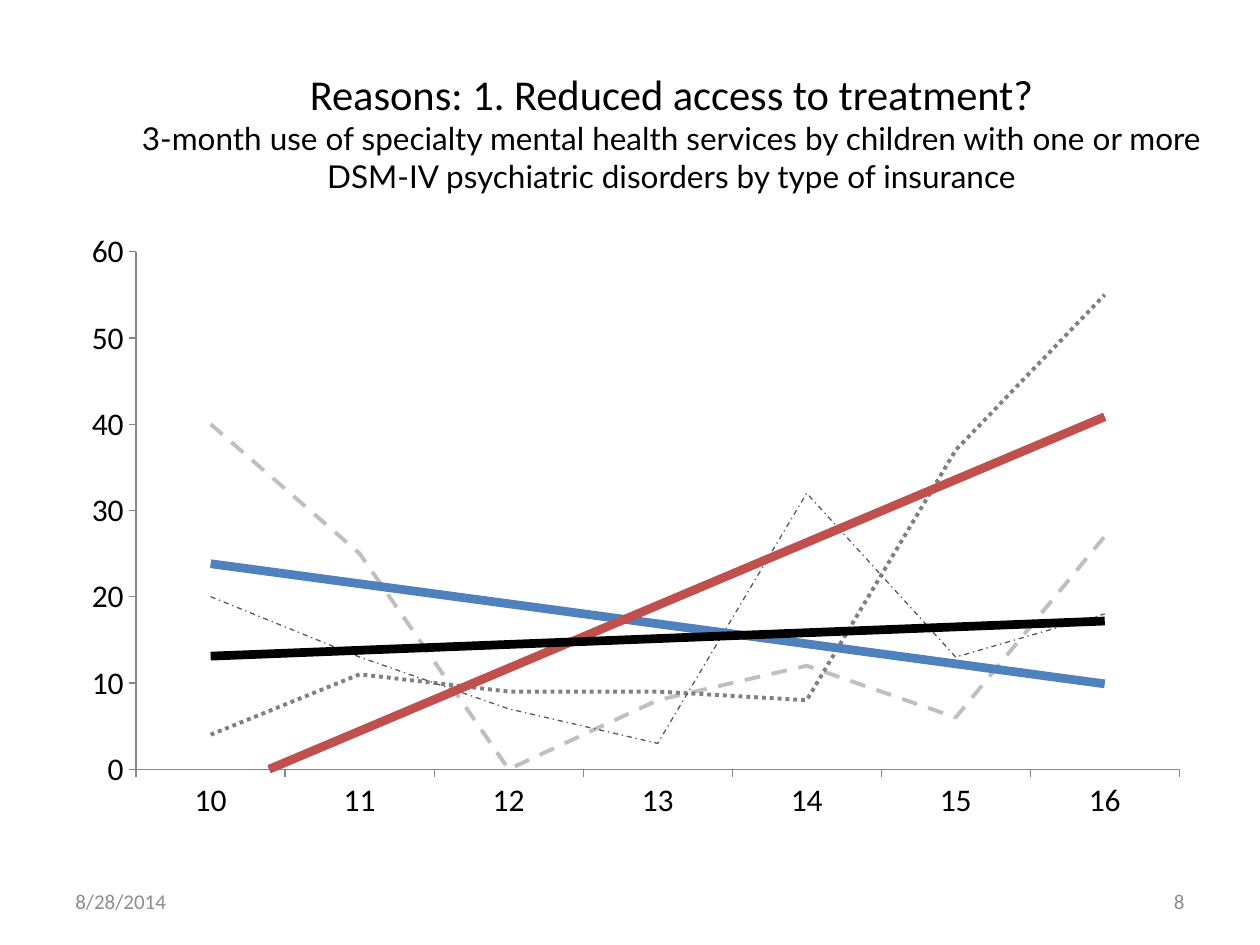
from dataclasses import dataclass

from lxml import etree
from pptx import Presentation
from pptx.chart.data import CategoryChartData
from pptx.dml.color import RGBColor
from pptx.enum.chart import XL_CHART_TYPE, XL_MARKER_STYLE, XL_TICK_MARK
from pptx.enum.dml import MSO_LINE
from pptx.enum.text import MSO_ANCHOR, MSO_AUTO_SIZE, PP_ALIGN
from pptx.oxml import parse_xml
from pptx.oxml.ns import nsdecls, qn
from pptx.util import Inches, Pt

LINE_CHART = XL_CHART_TYPE.LINE
NO_MARKER = XL_MARKER_STYLE.NONE
TICK_OUTSIDE, TICK_NONE = XL_TICK_MARK.OUTSIDE, XL_TICK_MARK.NONE
DASH, DOTS, DASH_DOT = MSO_LINE.DASH, MSO_LINE.ROUND_DOT, MSO_LINE.DASH_DOT
LEFT, CENTER, RIGHT = PP_ALIGN.LEFT, PP_ALIGN.CENTER, PP_ALIGN.RIGHT
MIDDLE = MSO_ANCHOR.MIDDLE
TITLE_ONLY = 5


@dataclass(frozen=True)
class Theme:
    font: str = "Calibri"
    subtitle_font: str = "Lato"
    text: str = "000000"
    footer: str = "8C8C8C"
    axis: str = "868686"
    title_size: float = 24.3
    body_size: float = 18
    footer_size: float = 12
    trend_width: float = 5


@dataclass(frozen=True)
class ServiceSeries:
    name: str
    values: tuple[int, ...]
    color: str
    width: float
    dash: int
    trend_color: str


THEME = Theme()
AGES = [str(age) for age in range(10, 17)]
SERIES = [
    ServiceSeries("Series 1", (40, 25, 0, 8, 12, 6, 27), "BFBFBF", 2.25, DASH, "4F81BD"),
    ServiceSeries("Series 2", (4, 11, 9, 9, 8, 37, 55), "808080", 2.25, DOTS, "C0504D"),
    ServiceSeries("Series 3", (20, 13, 7, 3, 32, 13, 18), "595959", 0.75, DASH_DOT, "000000"),
]


def write_text(paragraph, text: str, *, font: str = THEME.font,
               size: float = THEME.body_size, color: str = THEME.text,
               align=LEFT) -> None:
    paragraph.alignment = align
    run = paragraph.add_run()
    run.text = text
    run.font.name = font
    run.font.size = Pt(size)
    run.font.color.rgb = RGBColor.from_string(color)


def place(shape, left: float, top: float, width: float, height: float) -> None:
    shape.left, shape.top = Inches(left), Inches(top)
    shape.width, shape.height = Inches(width), Inches(height)


def add_title(slide) -> None:
    title = slide.shapes.title
    place(title, 0.83, 0.33, 9, 1.42)
    frame = title.text_frame
    frame.word_wrap = True
    frame.auto_size = MSO_AUTO_SIZE.NONE
    frame.vertical_anchor = MIDDLE
    write_text(frame.paragraphs[0], "Reasons: 1. Reduced access to treatment?",
               size=THEME.title_size, align=CENTER)
    subtitle = frame.add_paragraph()
    subtitle.space_before = Pt(0)
    write_text(subtitle,
               "3-month use of specialty mental health services by children with "
               "one or more DSM-IV psychiatric disorders by type of insurance",
               font=THEME.subtitle_font, align=CENTER)


def add_footer(slide, left: float, text: str, align) -> None:
    box = slide.shapes.add_textbox(Inches(left), Inches(6.95), Inches(2.33), Inches(0.4))
    box.text_frame.word_wrap = True
    box.text_frame.vertical_anchor = MIDDLE
    write_text(box.text_frame.paragraphs[0], text, size=THEME.footer_size,
               color=THEME.footer, align=align)


def add_trend(series, color: str) -> None:
    trend = parse_xml(
        f'<c:trendline {nsdecls("c", "a")}><c:spPr>'
        f'<a:ln w="{Pt(THEME.trend_width)}"><a:solidFill><a:srgbClr val="{color}"/>'
        '</a:solidFill></a:ln></c:spPr><c:trendlineType val="linear"/>'
        '<c:dispRSqr val="0"/><c:dispEq val="0"/></c:trendline>')
    series._element.find(qn("c:cat")).addprevious(trend)


def set_plot_area(chart, **fractions: float) -> None:
    """Fix the inner plot area as fractions of the chart's size."""
    plot_area = chart._chartSpace.find(".//" + qn("c:plotArea"))
    layout = plot_area.find(qn("c:layout"))
    if layout is None:
        layout = etree.Element(qn("c:layout"))
        plot_area.insert(0, layout)
    manual = etree.SubElement(layout, qn("c:manualLayout"))
    settings = {"layoutTarget": "inner", "xMode": "edge", "yMode": "edge", **fractions}
    for name, value in settings.items():
        etree.SubElement(manual, qn(f"c:{name}")).set("val", str(value))


def format_axis(axis) -> None:
    axis.has_major_gridlines = False
    axis.major_tick_mark = TICK_OUTSIDE
    axis.minor_tick_mark = TICK_NONE
    axis.format.line.color.rgb = RGBColor.from_string(THEME.axis)
    axis.format.line.width = Pt(0.75)


def add_service_chart(slide) -> None:
    data = CategoryChartData()
    data.categories = AGES
    for item in SERIES:
        data.add_series(item.name, item.values)
    chart = slide.shapes.add_chart(LINE_CHART, Inches(0.54), Inches(1.75),
                                   Inches(9), Inches(4.95), data).chart
    chart.has_legend = False
    chart.has_title = False
    chart.font.name = THEME.font
    chart.font.size = Pt(THEME.body_size)
    chart.font.color.rgb = RGBColor.from_string(THEME.text)
    chart.plots[0].vary_by_categories = False
    set_plot_area(chart, x=0.06, y=0.05, w=0.92, h=0.83)

    # Axes
    format_axis(chart.category_axis)
    format_axis(chart.value_axis)
    chart.value_axis.minimum_scale = 0
    chart.value_axis.maximum_scale = 60
    chart.value_axis.major_unit = 10

    # Observed lines and their linear trends
    for series, item in zip(chart.plots[0].series, SERIES):
        series.smooth = False
        series.marker.style = NO_MARKER
        line = series.format.line
        line.color.rgb = RGBColor.from_string(item.color)
        line.width = Pt(item.width)
        line.dash_style = item.dash
        add_trend(series, item.trend_color)


def main() -> None:
    presentation = Presentation()
    presentation.slide_width, presentation.slide_height = Inches(10), Inches(7.5)
    slide = presentation.slides.add_slide(presentation.slide_layouts[TITLE_ONLY])
    add_title(slide)
    add_service_chart(slide)
    add_footer(slide, 0.5, "8/28/2014", LEFT)
    add_footer(slide, 7.17, "8", RIGHT)
    presentation.save("out.pptx")


if __name__ == "__main__":
    main()
